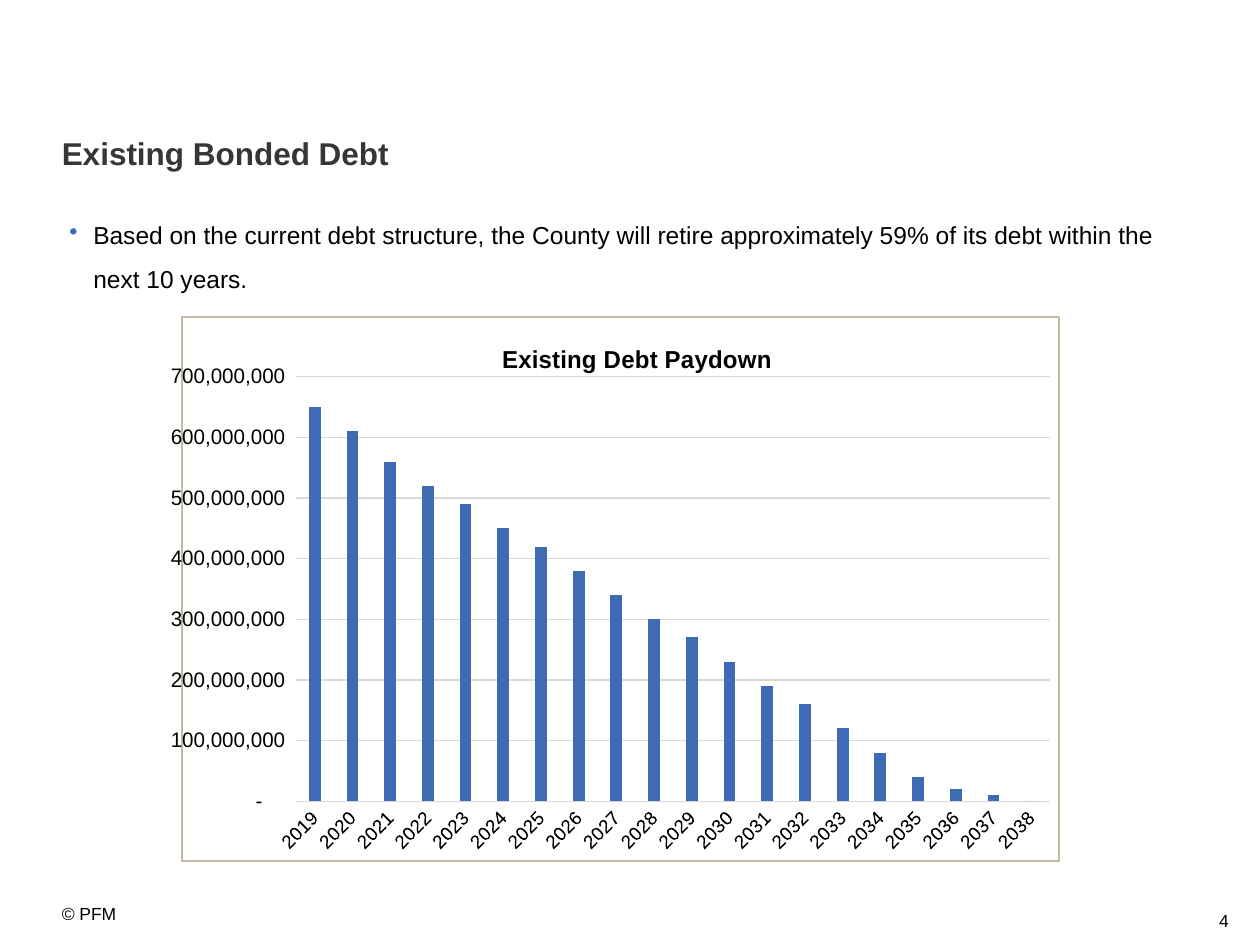
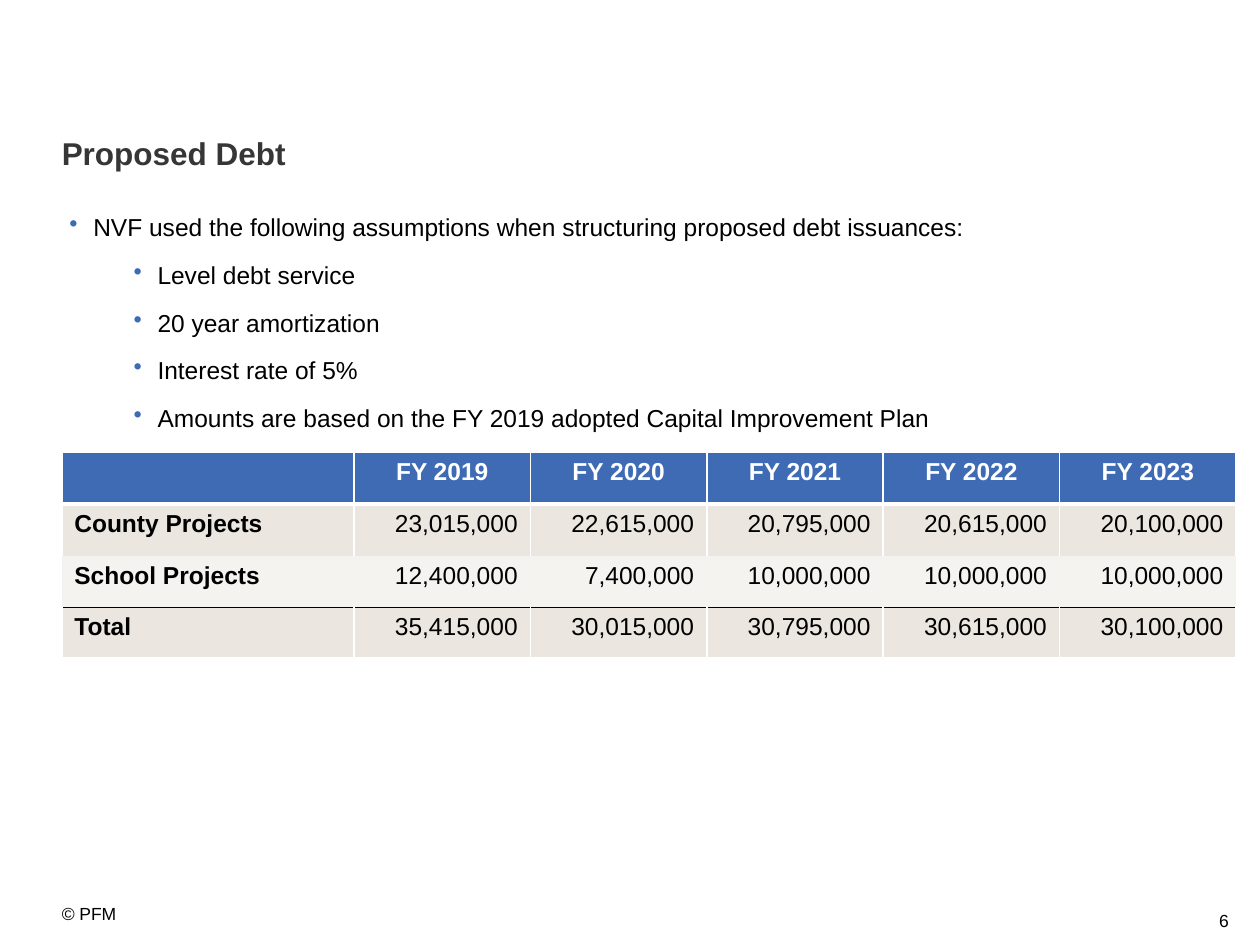
from dataclasses import dataclass

from pptx import Presentation
from pptx.chart.data import CategoryChartData
from pptx.dml.color import RGBColor
from pptx.enum.chart import XL_CHART_TYPE as ChartType, XL_TICK_MARK as Tick
from pptx.enum.text import MSO_ANCHOR as Anchor, PP_ALIGN as Align
from pptx.oxml import parse_xml
from pptx.oxml.ns import nsdecls, qn
from pptx.util import Inches, Pt

FONT = "Arial"
BLUE, INK, WHITE, BLACK = "3E6BB3", "373637", "FFFFFF", "000000"
BAND, PALE_BAND, GRID, FRAME = "EBE6E0", "F5F3F0", "D9D9D9", "C7B8A4"
LEFT = 0.49
TITLE_ONLY = 5

DEBT_YEARS = range(2019, 2039)
DEBT_MILLIONS = (650, 610, 560, 520, 490, 450, 420, 380, 340, 300,
                 270, 230, 190, 160, 120, 80, 40, 20, 10, 0)
MONEY = '_(* #,##0_);_(* \\(#,##0\\);_(* "-"??_);_(@_)'

FISCAL_YEARS = range(2019, 2024)
COUNTY = (23015000, 22615000, 20795000, 20615000, 20100000)
SCHOOL = (12400000, 7400000, 10000000, 10000000, 10000000)
TOTAL = tuple(map(sum, zip(COUNTY, SCHOOL)))


@dataclass
class Bullet:
    text: str
    level: int = 0


@dataclass
class Row:
    cells: list
    fill: str
    borders: dict
    header: bool = False


def rgb(color: str) -> RGBColor:
    return RGBColor.from_string(color)


def style_font(font, size: float, color: str = BLACK, bold: bool = False) -> None:
    font.name, font.size, font.bold = FONT, Pt(size), bold
    font.color.rgb = rgb(color)


def write(p, text: str, size: float = 14, color: str = BLACK, bold: bool = False,
          align=None, spacing: float | None = None, before: float = 0) -> None:
    p.alignment, p.line_spacing, p.space_before = align, spacing, Pt(before)
    r = p.add_run()
    r.text = text
    style_font(r.font, size, color, bold)


def set_margins(tf, left: float, top: float, right: float, bottom: float) -> None:
    tf.margin_left, tf.margin_top = Inches(left), Inches(top)
    tf.margin_right, tf.margin_bottom = Inches(right), Inches(bottom)


def add_text(s, left: float, top: float, width: float, height: float):
    tf = s.shapes.add_textbox(*map(Inches, (left, top, width, height))).text_frame
    tf.word_wrap = True
    return tf


def add_bullets(s, top: float, height: float, bullets: list[Bullet]) -> None:
    tf = add_text(s, LEFT, top, 9.12, height)
    set_margins(tf, 0, 0.05, 0.1, 0.05)
    for i, bullet in enumerate(bullets):
        p = tf.add_paragraph() if i else tf.paragraphs[0]
        p.level = bullet.level
        write(p, bullet.text, spacing=1.5, before=2 if i else 0)
        pPr = p._p.get_or_add_pPr()
        pPr.set("marL", str(Inches((0.25, 0.76)[bullet.level])))
        pPr.set("indent", str(-Inches(0.19)))
        pPr.append(parse_xml(
            f'<a:buClr {nsdecls("a")}><a:srgbClr val="{BLUE}"/></a:buClr>'))
        pPr.append(parse_xml(f'<a:buChar {nsdecls("a")} char="•"/>'))


def add_slide(prs, title: str, number: int):
    s = prs.slides.add_slide(prs.slide_layouts[TITLE_ONLY])
    sp = s.shapes.title
    sp.left, sp.top, sp.width, sp.height = map(Inches, (LEFT, 1.1, 8.62, 0.27))
    tf = sp.text_frame
    set_margins(tf, 0, 0, 0, 0)
    tf.vertical_anchor = Anchor.TOP
    write(tf.paragraphs[0], title, size=18, color=INK, bold=True,
          align=Align.LEFT, spacing=0.9)
    footer = add_text(s, LEFT, 7.17, 1.39, 0.27)
    set_margins(footer, 0, 0, 0, 0)
    write(footer.paragraphs[0], "© PFM", size=10)
    page = add_text(s, 6.85, 7.17, 3, 0.4)
    write(page.paragraphs[0], str(number), size=10, align=Align.RIGHT)
    return s


def place_in_chart(parent, index: int, inner: bool = False, **sizes: float) -> None:
    old = parent.find(qn("c:layout"))
    if old is not None:
        parent.remove(old)
    target = '<c:layoutTarget val="inner"/>' if inner else ""
    modes = '<c:xMode val="edge"/><c:yMode val="edge"/>'
    values = "".join(f'<c:{key} val="{value}"/>' for key, value in sizes.items())
    parent.insert(index, parse_xml(
        f'<c:layout {nsdecls("c")}><c:manualLayout>{target}{modes}{values}'
        '</c:manualLayout></c:layout>'))


def style_line(line, color: str, width: float = 0.75) -> None:
    line.color.rgb = rgb(color)
    line.width = Pt(width)


def add_paydown_chart(s) -> None:
    data = CategoryChartData(number_format=MONEY)
    data.categories = [str(year) for year in DEBT_YEARS]
    data.add_series("Series 1", [value * 1_000_000 for value in DEBT_MILLIONS])
    box = map(Inches, (1.31, 2.51, 7.1, 4.33))
    chart = s.shapes.add_chart(ChartType.COLUMN_CLUSTERED, *box, data).chart
    style_font(chart.font, 10)
    chart.has_legend = False
    chart.has_title = True
    write(chart.chart_title.text_frame.paragraphs[0], "Existing Debt Paydown", bold=True)
    place_in_chart(chart.chart_title.element, 1, x=0.36, y=0.04)

    plot = chart.plots[0]
    plot.gap_width, plot.overlap, plot.vary_by_categories = 219, -27, False
    fill = plot.series[0].format.fill
    fill.solid()
    fill.fore_color.rgb = rgb(BLUE)

    years, amounts = chart.category_axis, chart.value_axis
    for axis, size in ((years, 11), (amounts, 12)):
        axis.major_tick_mark = axis.minor_tick_mark = Tick.NONE
        style_font(axis.tick_labels.font, size)
    style_line(years.format.line, GRID)
    amounts.format.line.fill.background()
    style_line(amounts.major_gridlines.format.line, GRID)
    amounts.minimum_scale, amounts.maximum_scale = 0, 700_000_000
    amounts.major_unit = 100_000_000
    amounts.tick_labels.number_format = MONEY
    amounts.tick_labels.number_format_is_linked = False

    space = chart.element
    place_in_chart(space.find(".//" + qn("c:plotArea")), 0, inner=True,
                   x=0.13, y=0.11, w=0.86, h=0.78)
    space.find(qn("c:txPr")).addprevious(parse_xml(
        f'<c:spPr {nsdecls("c", "a")}><a:noFill/><a:ln w="{Pt(0.75)}"><a:solidFill>'
        f'<a:srgbClr val="{FRAME}"/></a:solidFill></a:ln></c:spPr>'))


def set_borders(cell, borders: dict) -> None:
    tcPr = cell._tc.get_or_add_tcPr()
    for side in "LRTB":
        color, width = borders.get(side, (None, 0))
        paint = (f'<a:solidFill><a:srgbClr val="{color}"/></a:solidFill>'
                 if color else "<a:noFill/>")
        tcPr.append(parse_xml(
            f'<a:ln{side} {nsdecls("a")} w="{Pt(width)}">{paint}</a:ln{side}>'))


def add_projects_table(s) -> None:
    thin, rule = (WHITE, 1), (BLACK, 1)
    sides = {"L": thin, "R": thin, "T": thin}
    rows = [
        Row([""] + [f"FY {year}" for year in FISCAL_YEARS], BLUE,
            sides | {"B": (WHITE, 3)}, header=True),
        Row(["County Projects", *COUNTY], BAND, sides | {"T": (WHITE, 3)}),
        Row(["School Projects", *SCHOOL], PALE_BAND, {"B": rule}),
        Row(["Total", *TOTAL], BAND, sides | {"T": rule, "B": thin}),
    ]
    box = map(Inches, (LEFT, 3.59, 9.32, 1.61))
    table = s.shapes.add_table(len(rows), len(rows[0].cells), *box).table
    for i, column in enumerate(table.columns):
        column.width = Inches(1.4 if i else 2.32)
    for i, row in enumerate(rows):
        table.rows[i].height = Inches(0.41 if i < 3 else 0.4)
        for j, value in enumerate(row.cells):
            cell = table.cell(i, j)
            set_borders(cell, row.borders)
            cell.fill.solid()
            cell.fill.fore_color.rgb = rgb(row.fill)
            if value == "":
                continue
            align = Align.CENTER if row.header else Align.RIGHT if j else Align.LEFT
            write(cell.text_frame.paragraphs[0],
                  value if isinstance(value, str) else f"{value:,}",
                  color=WHITE if row.header else BLACK,
                  bold=row.header or j == 0, align=align)


def main() -> None:
    prs = Presentation()
    prs.slide_width, prs.slide_height = Inches(10), Inches(7.5)

    s = add_slide(prs, "Existing Bonded Debt", 4)
    add_bullets(s, 1.58, 0.85, [
        Bullet("Based on the current debt structure, the County will retire "
               "approximately 59% of its debt within the next 10 years.")])
    add_paydown_chart(s)

    s = add_slide(prs, "Proposed Debt", 6)
    add_projects_table(s)
    add_bullets(s, 1.52, 1.92, [
        Bullet("NVF used the following assumptions when structuring proposed "
               "debt issuances:"),
        Bullet("Level debt service", 1),
        Bullet("20 year amortization", 1),
        Bullet("Interest rate of 5%", 1),
        Bullet("Amounts are based on the FY 2019 adopted Capital Improvement Plan", 1)])

    prs.save("out.pptx")


if __name__ == "__main__":
    main()
